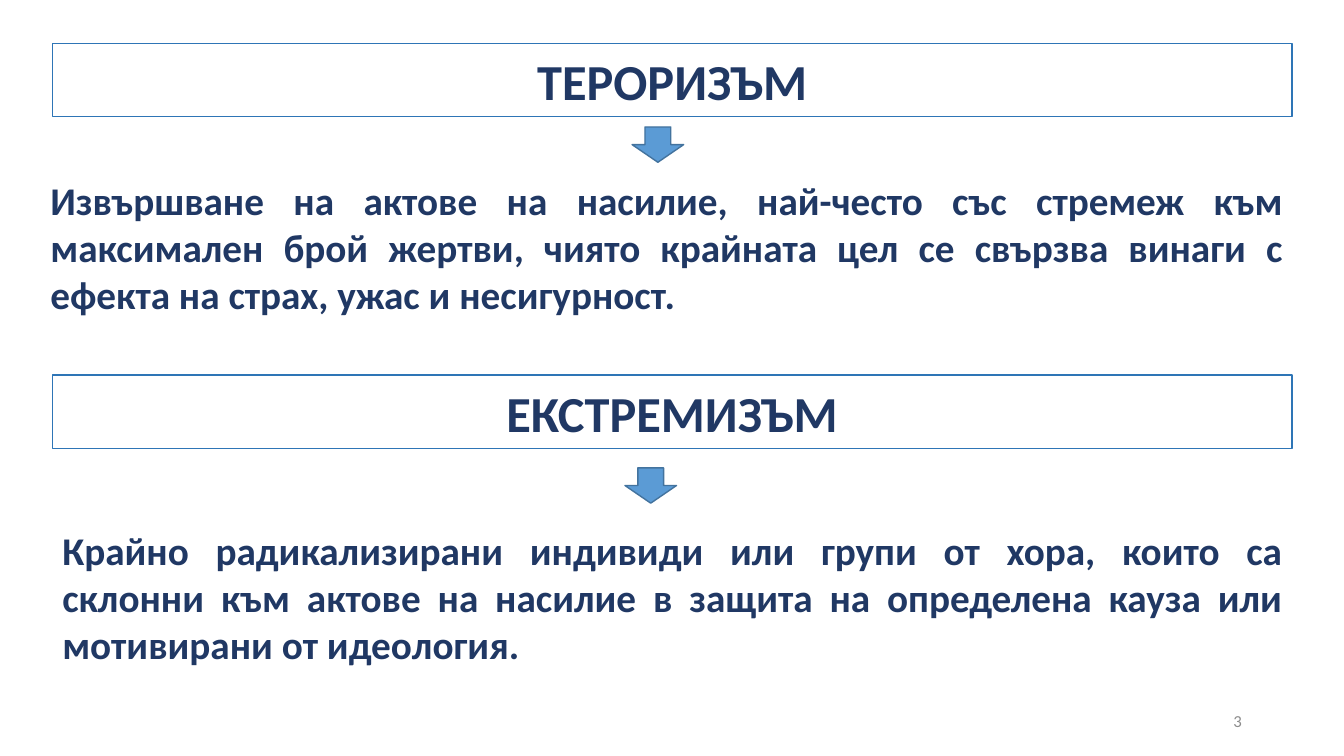
from pptx import Presentation
from pptx.dml.color import RGBColor
from pptx.enum.shapes import MSO_SHAPE as SHAPE
from pptx.enum.text import MSO_ANCHOR as ANCHOR, MSO_AUTO_SIZE as FIT, PP_ALIGN as ALIGN
from pptx.util import Cm, Pt

SECTIONS = [
    {
        "heading": "ТЕРОРИЗЪМ",
        "heading_top": 1.09,
        "arrow": (15.93, 3.2),
        "body": "Извършване на актове на насилие, най-често със стремеж към максимален брой жертви, "
                "чиято крайната цел се свързва винаги с ефекта на страх, ужас и несигурност.",
        "body_box": (1.02, 4.32, 31.55, 3.84),
    },
    {
        "heading": "ЕКСТРЕМИЗЪМ",
        "heading_top": 9.45,
        "arrow": (15.75, 11.79),
        "body": "Крайно радикализирани индивиди или групи от хора, които са склонни към актове "
                "на насилие в защита на определена кауза или мотивирани от идеология.",
        "body_box": (1.32, 13.13, 31.24, 5.05),
    },
]
PAGE_NUMBER = "3"
PAGE_NUMBER_BOX = (23.93, 17.65, 7.62, 1.02)
HEADING_LEFT, HEADING_WIDTH, HEADING_HEIGHT = 1.32, 31.24, 1.85
ARROW_SIZE = (1.3, 0.89)

NAVY, GREY = "203864", "8C8C8C"
HEADING_FONT = {"name": "Calibri", "size": Pt(36), "bold": True}
BODY_FONT = {"name": "Calibri", "size": Pt(28), "bold": True}
NUMBER_FONT = {"name": "Calibri", "size": Pt(12), "bold": False}
HEADING_PARAGRAPH = {"alignment": ALIGN.CENTER, "line_spacing": 0.9}
HEADING_FRAME = {"vertical_anchor": ANCHOR.BOTTOM, "auto_size": FIT.NONE}
BODY_FRAME = {"vertical_anchor": ANCHOR.TOP, "auto_size": FIT.SHAPE_TO_FIT_TEXT}
NUMBER_FRAME = {"vertical_anchor": ANCHOR.MIDDLE, "auto_size": FIT.NONE}


def rgb(color):
    return RGBColor.from_string(color)


def apply(target, values):
    for name, value in values.items():
        setattr(target, name, value)


def place(sp, box):
    apply(sp, dict(zip(("left", "top", "width", "height"), map(Cm, box))))


def paint(sp, fill, line):
    sp.fill.solid()
    sp.fill.fore_color.rgb = rgb(fill)
    sp.line.color.rgb = rgb(line)
    sp.line.width = Pt(1)


def write(sp, text, font, color, paragraph, frame):
    tf = sp.text_frame
    tf.word_wrap = True
    apply(tf, frame)
    p = tf.paragraphs[0]
    apply(p, paragraph)
    r = p.add_run()
    r.text = text
    apply(r.font, font)
    r.font.color.rgb = rgb(color)


def add_shape(s, kind, box):
    sp = s.shapes.add_shape(kind, *map(Cm, box))
    sp.shadow.inherit = False
    return sp


def add_text(s, box, *text_format):
    write(s.shapes.add_textbox(*map(Cm, box)), *text_format)


def main():
    prs = Presentation()
    prs.slide_width, prs.slide_height = Cm(33.87), Cm(19.05)
    s = prs.slides.add_slide(prs.slide_layouts[5])

    for i, section in enumerate(SECTIONS):
        box = (HEADING_LEFT, section["heading_top"], HEADING_WIDTH, HEADING_HEIGHT)
        if i == 0:
            heading = s.shapes.title
            place(heading, box)
        else:
            heading = add_shape(s, SHAPE.RECTANGLE, box)
        paint(heading, "FFFFFF", "2E75B6")
        write(heading, section["heading"], HEADING_FONT, NAVY, HEADING_PARAGRAPH, HEADING_FRAME)

        arrow = add_shape(s, SHAPE.DOWN_ARROW, section["arrow"] + ARROW_SIZE)
        paint(arrow, "5B9BD5", "43739E")
        add_text(s, section["body_box"], section["body"], BODY_FONT, NAVY,
                 {"alignment": ALIGN.JUSTIFY}, BODY_FRAME)

    add_text(s, PAGE_NUMBER_BOX, PAGE_NUMBER, NUMBER_FONT, GREY,
             {"alignment": ALIGN.RIGHT}, NUMBER_FRAME)
    prs.save("out.pptx")


if __name__ == "__main__":
    main()
